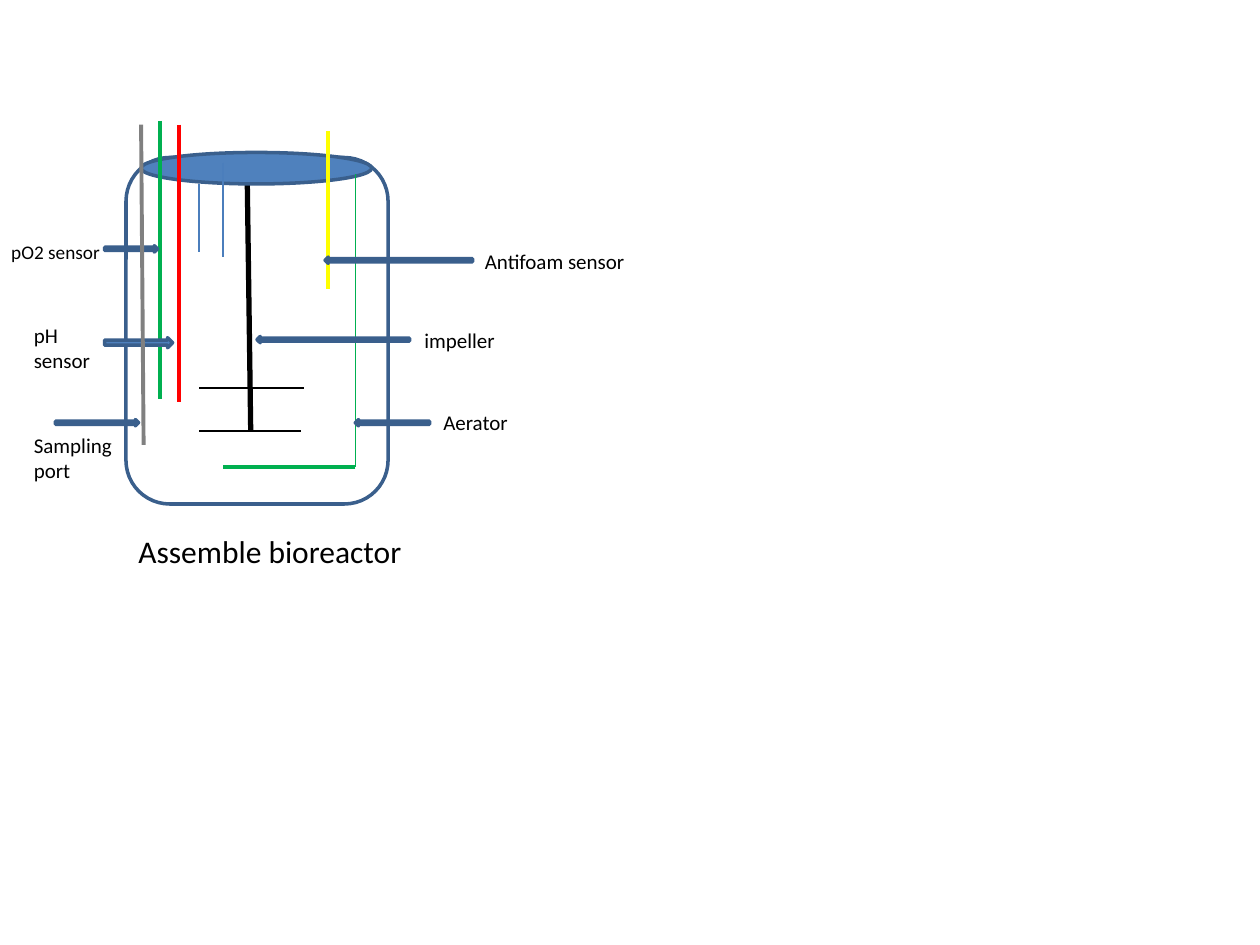
from dataclasses import dataclass

from pptx import Presentation
from pptx import util as u
from pptx.dml.color import RGBColor
from pptx.enum import shapes, text
from pptx.oxml.ns import qn
from lxml import etree


@dataclass(frozen=True)
class Theme:
    """Colours, type sizes and line widths of the slide."""
    font: str = "Calibri"
    ink: str = "000000"
    steel: str = "4F81BD"
    outline: str = "3A5F8C"
    port: str = "4B7EBC"
    green: str = "00B050"
    red: str = "FF0000"
    yellow: str = "FFFF00"
    grey: str = "808080"
    title: float = 18
    label: float = 12
    small: float = 11
    hairline: float = 0.75
    edge: float = 2
    probe: float = 2.25
    shaft: float = 3


THEME = Theme()
SHAPE = shapes.MSO_SHAPE


def add_solid(slide, kind, left, top, width, height, fill=None, rotation=0):
    """Add an outlined preset shape, filled when a colour is given."""
    solid = slide.shapes.add_shape(kind, *map(u.Inches, (left, top, width, height)))
    solid.shadow.inherit = False
    solid.rotation = rotation
    if fill:
        solid.fill.solid()
        solid.fill.fore_color.rgb = RGBColor.from_string(fill)
    else:
        solid.fill.background()
    solid.line.color.rgb = RGBColor.from_string(THEME.outline)
    solid.line.width = u.Pt(THEME.edge)
    return solid


def add_rod(slide, x1, y1, x2, y2, color, width=THEME.hairline):
    """Add a straight line between two points."""
    rod = slide.shapes.add_connector(
        shapes.MSO_CONNECTOR.STRAIGHT, *map(u.Inches, (x1, y1, x2, y2)))
    rod.line.color.rgb = RGBColor.from_string(color)
    rod.line.width = u.Pt(width)
    etree.SubElement(rod._element.spPr, qn("a:effectLst"))
    return rod


def add_label(slide, words, left, top, width, height, size=THEME.label, wrap=True):
    """Add a text box with one run of text."""
    label = slide.shapes.add_textbox(*map(u.Inches, (left, top, width, height)))
    frame = label.text_frame
    frame.word_wrap = wrap
    frame.auto_size = text.MSO_AUTO_SIZE.SHAPE_TO_FIT_TEXT
    run = frame.paragraphs[0].add_run()
    run.text = words
    run.font.name = THEME.font
    run.font.size = u.Pt(size)
    run.font.color.rgb = RGBColor.from_string(THEME.ink)
    return label


def add_pointer(slide, left, top, width, height=0.05, leftward=False):
    """Add a thin block arrow that points at a part."""
    return add_solid(slide, SHAPE.RIGHT_ARROW, left, top, width, height,
                     THEME.steel, 180 if leftward else 0)


def draw_vessel(slide):
    """Draw the vessel, its impeller and its lid."""
    add_solid(slide, SHAPE.ROUNDED_RECTANGLE, 1, 1.25, 2.08, 2.75)
    add_rod(slide, 1.96, 1.25, 1.99, 3.42, THEME.ink, THEME.shaft)
    for blade_y, blade_end in ((3.08, 2.41), (3.42, 2.39)):
        add_rod(slide, 1.58, blade_y, blade_end, blade_y, THEME.ink)
    add_solid(slide, SHAPE.OVAL, 1.12, 1.21, 1.83, 0.25, THEME.steel)


def draw_probes(slide):
    """Draw the sensors, the ports and the aerator."""
    for x, top, bottom, color, width in (
        (2.6, 1.04, 2.29, THEME.yellow, THEME.probe),
        (1.77, 1.29, 2.04, THEME.port, THEME.hairline),
        (1.58, 1.46, 2, THEME.port, THEME.hairline),
        (2.82, 1.38, 3.71, THEME.green, THEME.hairline),
        (1.42, 0.99, 3.19, THEME.red, THEME.probe),
        (1.27, 0.96, 3.17, THEME.green, THEME.probe),
    ):
        add_rod(slide, x, top, x, bottom, color, width)
    add_rod(slide, 2.82, 3.71, 1.77, 3.71, THEME.green, THEME.probe)


def draw_callouts(slide):
    """Point at each part and name it."""
    add_pointer(slide, 0.83, 1.95, 0.42)
    add_label(slide, "pO2 sensor", -0.01, 1.86, 0.91, 0.29, size=THEME.small, wrap=False)
    add_pointer(slide, 0.83, 2.68, 0.54, 0.08)
    add_label(slide, "pH sensor", 0.17, 2.51, 0.73, 0.5)
    for words, tip, arrow_y, length, label_x, label_y, label_width in (
        ("impeller", 2.04, 2.67, 1.21, 3.27, 2.55, 2.17),
        ("Antifoam sensor", 2.58, 2.04, 1.17, 3.75, 1.92, 1.5),
        ("Aerator", 2.82, 3.33, 0.59, 3.42, 3.2, 1.33),
    ):
        add_pointer(slide, tip, arrow_y, length, leftward=True)
        add_label(slide, words, label_x, label_y, label_width, 0.3)
    add_rod(slide, 1.12, 0.99, 1.14, 3.53, THEME.grey, THEME.probe)
    add_pointer(slide, 0.44, 3.33, 0.66)
    add_label(slide, "Sampling port", 0.17, 3.38, 0.88, 0.5)


def main():
    """Build the bioreactor slide and save it."""
    deck = Presentation()
    deck.slide_width, deck.slide_height = u.Inches(10), u.Inches(7.5)
    slide = deck.slides.add_slide(deck.slide_layouts[6])
    draw_vessel(slide)
    draw_probes(slide)
    add_label(slide, "Assemble bioreactor", 1, 4.17, 2.42, 0.4, size=THEME.title)
    draw_callouts(slide)
    deck.save("out.pptx")


if __name__ == "__main__":
    main()
